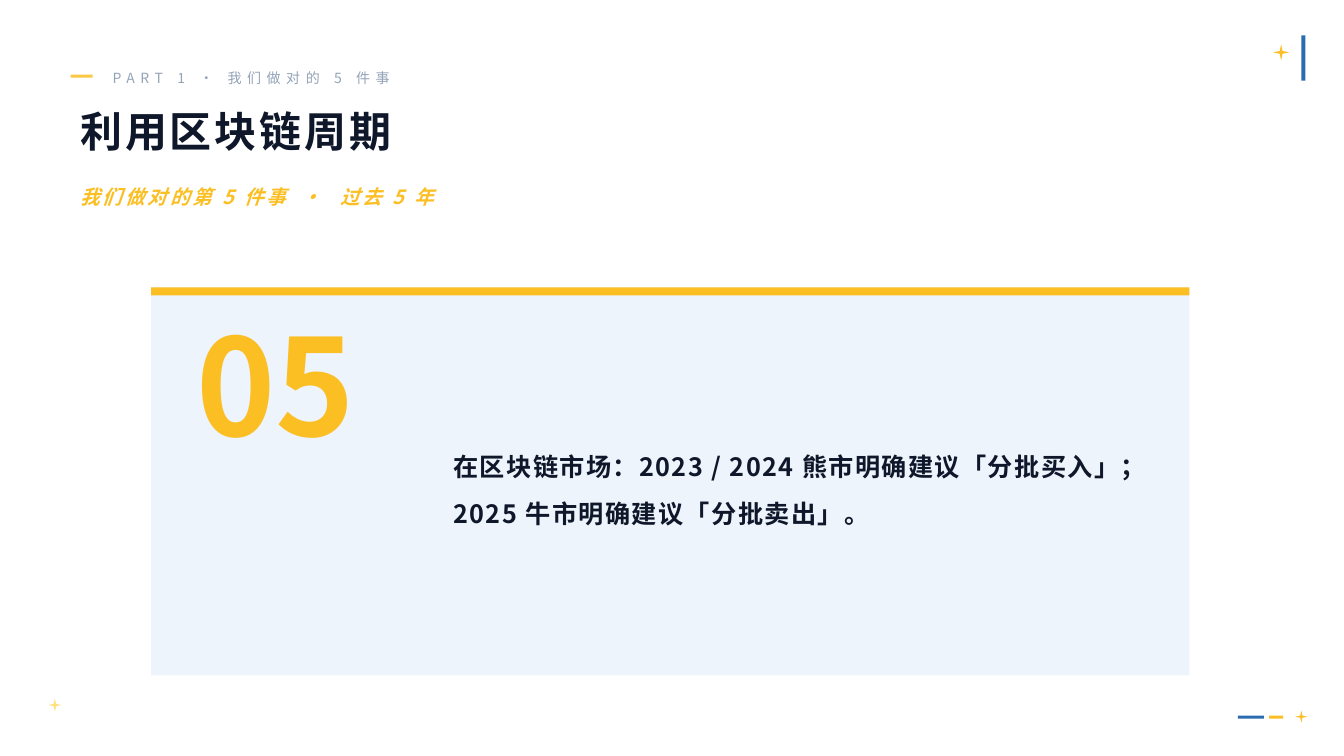
from dataclasses import dataclass

from lxml import etree
from pptx import Presentation
from pptx.dml.color import RGBColor
from pptx.enum.shapes import MSO_SHAPE
from pptx.enum.text import MSO_ANCHOR
from pptx.oxml.ns import qn
from pptx.util import Inches, Pt

RECTANGLE, STAR = MSO_SHAPE.RECTANGLE, MSO_SHAPE.STAR_4_POINT
TOP, MIDDLE = MSO_ANCHOR.TOP, MSO_ANCHOR.MIDDLE

# Square grid: each cell is a tenth of an inch
CELL = Inches(0.1)
COLUMNS, ROWS = 133.33, 75

FONT = "Noto Sans CJK SC"
BLUE, AMBER, PALE_AMBER = "2B6CB0", "FBBF24", "FFE082"
INK, GREY, PANEL = "0F172A", "94A3B8", "EEF4FB"


@dataclass(frozen=True)
class Area:
    column: float
    row: float
    columns: float
    rows: float

    def lengths(self) -> list[int]:
        return [round(cells * CELL)
                for cells in (self.column, self.row, self.columns, self.rows)]


@dataclass(frozen=True)
class Block:
    area: Area
    color: str
    kind: MSO_SHAPE = RECTANGLE
    opacity: int = 100


@dataclass(frozen=True)
class Span:
    text: str
    tracking: float = 0


@dataclass(frozen=True)
class Label:
    area: Area
    spans: tuple[Span, ...]
    size: int
    color: str
    bold: bool = True
    italic: bool = False
    anchor: MSO_ANCHOR = MIDDLE
    line_spacing: float | None = None


def rgb(color: str) -> RGBColor:
    return RGBColor.from_string(color)


def draw_block(page, block: Block) -> None:
    shape = page.shapes.add_shape(block.kind, *block.area.lengths())
    shape.shadow.inherit = False
    shape.line.fill.background()
    shape.fill.solid()
    shape.fill.fore_color.rgb = rgb(block.color)
    if block.opacity < 100:
        color = shape.fill._xPr.find(qn("a:solidFill"))[0]
        etree.SubElement(color, qn("a:alpha")).set("val", str(block.opacity * 1000))


def draw_label(page, label: Label) -> None:
    box = page.shapes.add_textbox(*label.area.lengths())
    frame = box.text_frame
    frame.word_wrap = True
    frame.vertical_anchor = label.anchor
    para = frame.paragraphs[0]
    if label.line_spacing:
        para.line_spacing = label.line_spacing
    font = para.font
    font.name, font.size = FONT, Pt(label.size)
    font.bold, font.italic = label.bold, label.italic
    font.color.rgb = rgb(label.color)
    for span in label.spans:
        run = para.add_run()
        run.text = span.text
        # Letter spacing and the East Asian typeface
        properties = run._r.get_or_add_rPr()
        properties.set("spc", str(round(span.tracking * 100)))
        etree.SubElement(properties, qn("a:ea")).set("typeface", FONT)


BLOCKS = (
    # Top right corner
    Block(Area(129.1, 3.5, 0.4, 4.5), BLUE),
    Block(Area(126.3, 4.4, 1.6, 1.6), AMBER, STAR),
    # Bottom corners
    Block(Area(122.8, 71, 2.6, 0.3), BLUE),
    Block(Area(125.9, 71, 1.4, 0.3), AMBER),
    Block(Area(128.5, 70.5, 1.2, 1.2), AMBER, STAR),
    Block(Area(4.8, 69.3, 1.3, 1.3), PALE_AMBER, STAR),
    # Dash before the part name
    Block(Area(7, 7.4, 2.2, 0.3), AMBER, opacity=85),
    # Card with its top band
    Block(Area(15, 28.5, 103, 38.5), PANEL),
    Block(Area(15, 28.5, 103, 0.8), AMBER),
)

LABELS = (
    # Heading
    Label(Area(10.2, 6.2, 80, 3), (Span("PART 1 · 我们做对的 5 件事", 4),),
          10, GREY, bold=False),
    Label(Area(7, 10, 120, 10), (Span("利用区块链周期", 2),), 30, INK, anchor=TOP),
    Label(Area(7, 17.5, 120, 4),
          (Span("我们做对的第 5 件事", 2), Span(" · ", 5.4), Span("过去 5 年", 2)),
          14, AMBER, italic=True),
    # Card text
    Label(Area(18.5, 29.5, 24, 15), (Span("05"),), 96, AMBER, anchor=TOP),
    Label(Area(44, 30.5, 70, 34.5),
          (Span("在区块链市场：2023 / 2024 熊市明确建议「分批买入」；"
                "2025 牛市明确建议「分批卖出」。", 1),),
          18, INK, line_spacing=1.55),
)


def main() -> None:
    deck = Presentation()
    deck.slide_width, deck.slide_height = round(COLUMNS * CELL), ROWS * CELL
    page = deck.slides.add_slide(deck.slide_layouts[6])
    page.background.fill.solid()
    page.background.fill.fore_color.rgb = rgb("FFFFFF")
    for block in BLOCKS:
        draw_block(page, block)
    for label in LABELS:
        draw_label(page, label)
    deck.save("out.pptx")


if __name__ == "__main__":
    main()
